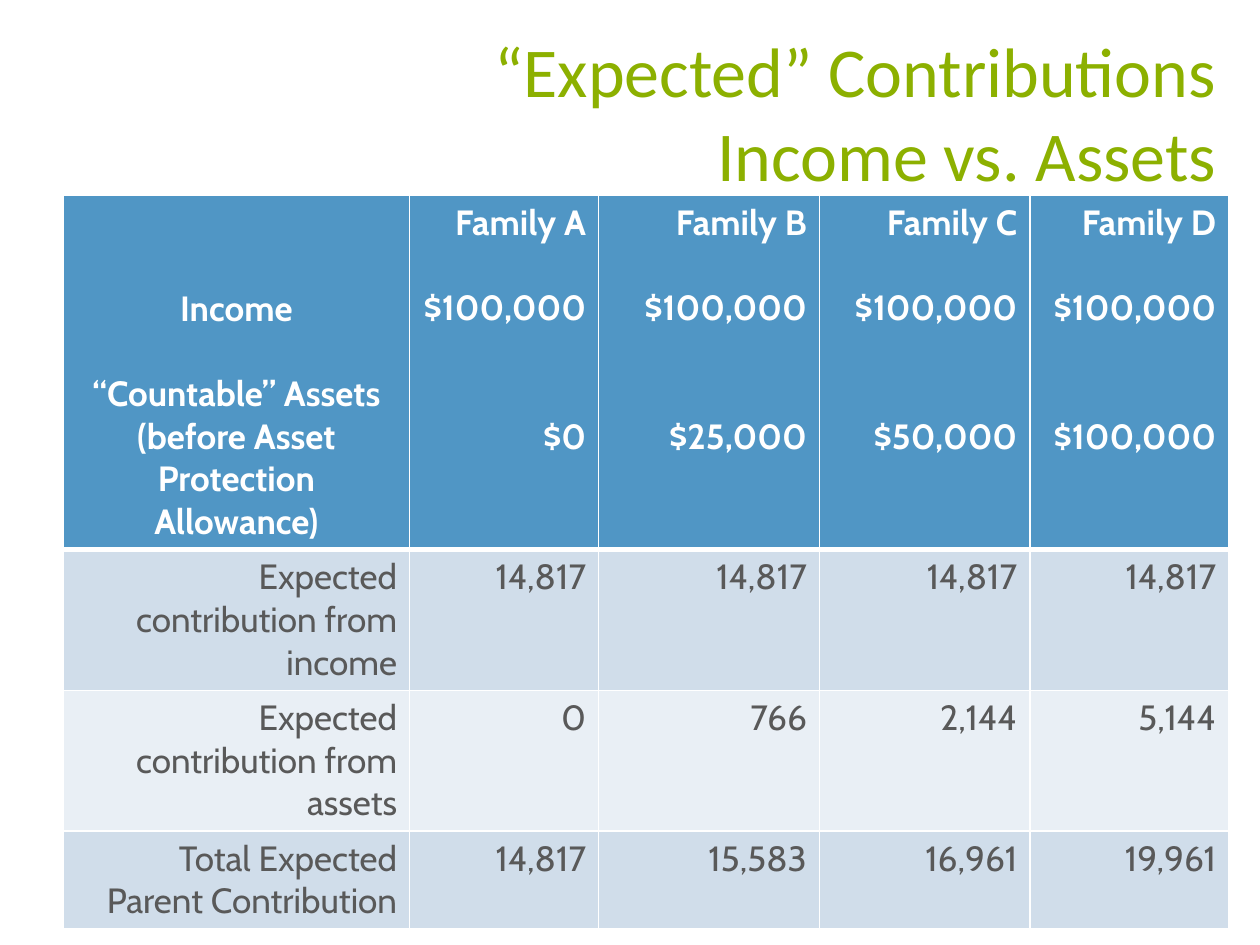
from dataclasses import dataclass

import pptx
import pptx.dml.color
import pptx.enum.text
import pptx.oxml.ns
import pptx.util
from lxml import etree

Cm, Pt = pptx.util.Cm, pptx.util.Pt
RGB = pptx.dml.color.RGBColor.from_string
qn = pptx.oxml.ns.qn
ALIGN = pptx.enum.text.PP_ALIGN


@dataclass(frozen=True)
class Theme:
    title_font: str = "Calibri"
    table_font: str = "Cabin"
    title_size: float = 40
    table_size: float = 20
    line_height: float = 24.4
    title_color: str = "8CB000"
    header_fill: str = "5096C5"
    header_text: str = "FFFFFF"
    body_text: str = "595959"
    bands: tuple = ("D0DDEA", "E9EFF5")
    rule: str = "FFFFFF"


theme = Theme()


def set_borders(cell, widths):
    """Draw the left, right, top and bottom rules, with widths in points."""
    properties = cell._tc.get_or_add_tcPr()
    for side, width in zip("LRTB", widths):
        line = etree.SubElement(properties, qn(f"a:ln{side}"), w=str(Pt(width)))
        fill = etree.SubElement(line, qn("a:solidFill"))
        etree.SubElement(fill, qn("a:srgbClr"), val=theme.rule)


def write_cell(cell, lines, gaps, alignment, color, bold):
    """Write one paragraph per line; gaps count the empty lines above each."""
    frame = cell.text_frame
    frame.text = "\n".join(lines)
    for paragraph, gap in zip(frame.paragraphs, gaps):
        paragraph.alignment = alignment
        if gap:
            paragraph.space_before = Pt(gap * theme.line_height)
        paragraph.font.name = theme.table_font
        paragraph.font.size = Pt(theme.table_size)
        paragraph.font.bold = bold
        paragraph.font.color.rgb = RGB(color)


presentation = pptx.Presentation()
presentation.slide_width, presentation.slide_height = Cm(25.4), Cm(19.05)
slide = presentation.slides.add_slide(presentation.slide_layouts[5])

heading = slide.shapes.title
heading.left, heading.top = Cm(1.27), Cm(0.43)
heading.width, heading.height = Cm(23.5), Cm(2.67)
heading.text_frame.text = "“Expected” Contributions\vIncome vs. Assets"
heading.text_frame.vertical_anchor = pptx.enum.text.MSO_ANCHOR.TOP
heading.text_frame.auto_size = pptx.enum.text.MSO_AUTO_SIZE.NONE
heading_line = heading.text_frame.paragraphs[0]
heading_line.alignment = ALIGN.RIGHT
heading_line.font.name = theme.title_font
heading_line.font.size = Pt(theme.title_size)
heading_line.font.color.rgb = RGB(theme.title_color)

families = [
    ("Family A", "$100,000", "$0"),
    ("Family B", "$100,000", "$25,000"),
    ("Family C", "$100,000", "$50,000"),
    ("Family D", "$100,000", "$100,000"),
]
contributions = [
    ("Expected contribution from income", "14,817", "14,817", "14,817", "14,817"),
    ("Expected contribution from assets", "0", "766", "2,144", "5,144"),
    ("Total Expected Parent Contribution", "14,817", "15,583", "16,961", "19,961"),
]
column_widths = [6.99, 3.81, 4.45, 4.24, 4.01]
row_heights = [6.91, 2.39, 2.39, 1.9]

table = slide.shapes.add_table(
    len(row_heights), len(column_widths),
    Cm(1.27), Cm(3.94), Cm(sum(column_widths)), Cm(sum(row_heights)),
).table
for column, width in zip(table.columns, column_widths):
    column.width = Cm(width)
for row, height in zip(table.rows, row_heights):
    row.height = Cm(height)

for r, row in enumerate(table.rows):
    for cell in row.cells:
        set_borders(cell, (1, 1, 3 if r == 1 else 1, 3 if r == 0 else 1))
        cell.fill.solid()
        cell.fill.fore_color.rgb = RGB(theme.bands[(r - 1) % 2] if r else theme.header_fill)

criteria = table.cell(0, 0)
criteria.margin_top = Cm(0.13) + Pt(2 * theme.line_height)
write_cell(criteria, ("Income", "“Countable” Assets (before Asset Protection Allowance)"),
           (0, 1), ALIGN.CENTER, theme.header_text, True)
for c, family in enumerate(families, start=1):
    write_cell(table.cell(0, c), family, (0, 1, 2), ALIGN.RIGHT, theme.header_text, True)

for r, contribution in enumerate(contributions, start=1):
    for c, entry in enumerate(contribution):
        write_cell(table.cell(r, c), (entry,), (0,), ALIGN.RIGHT, theme.body_text, False)

presentation.save("out.pptx")
